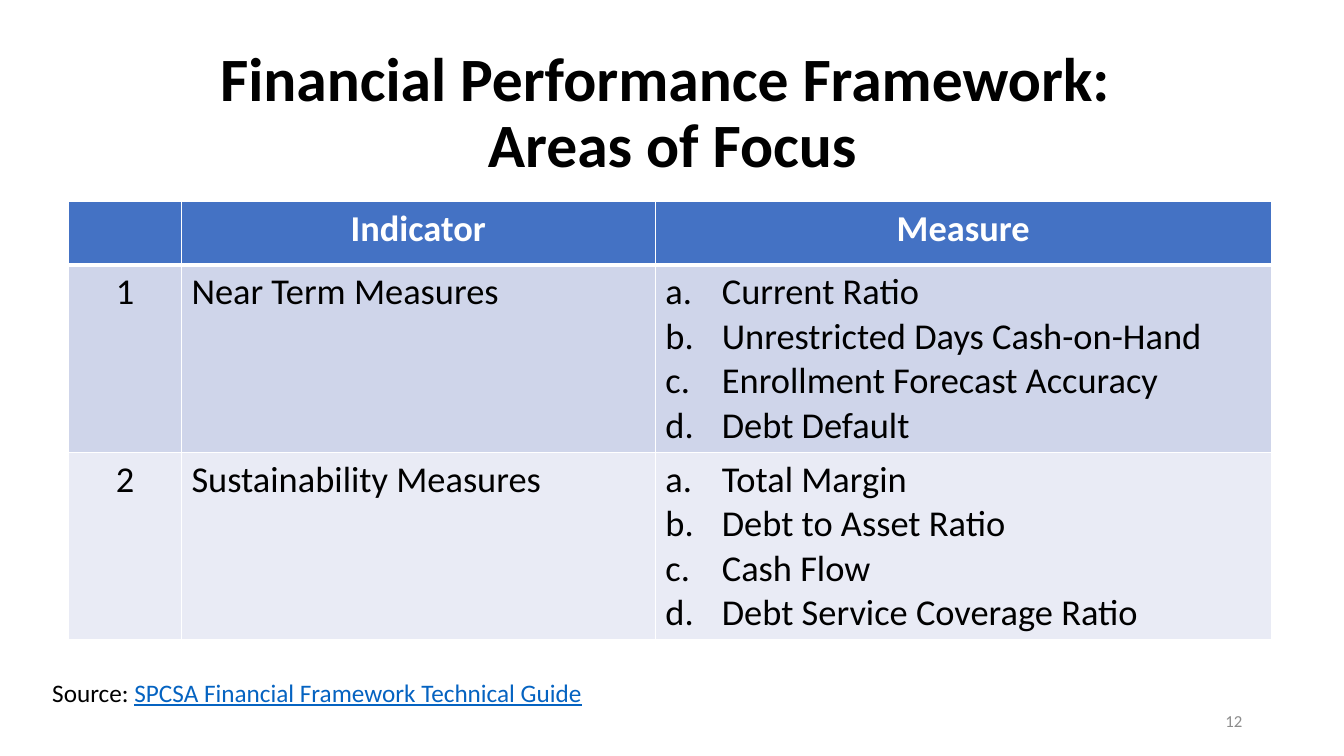
import pptx
import pptx.dml.color
import pptx.enum.text
import pptx.oxml
import pptx.oxml.ns
import pptx.util
from pptx.util import Inches

ALIGN = pptx.enum.text.PP_ALIGN
ANCHOR = pptx.enum.text.MSO_ANCHOR
COLORS = {
    "text": "000000", "white": "FFFFFF", "muted": "8C8C8C", "link": "0563C1",
    "header": "4472C4", "band_dark": "CFD5EA", "band_light": "E9EBF5",
}
COLUMN_WIDTHS = [1.12, 4.7, 6.11]
ROW_HEIGHTS = [0.63, 1.86, 1.86]
INDICATORS = [
    ("Near Term Measures",
     ["Current Ratio", "Unrestricted Days Cash-on-Hand",
      "Enrollment Forecast Accuracy", "Debt Default"]),
    ("Sustainability Measures",
     ["Total Margin", "Debt to Asset Ratio", "Cash Flow",
      "Debt Service Coverage Ratio"]),
]


def rgb(name):
    return pptx.dml.color.RGBColor.from_string(COLORS[name])


class SlideBuilder:
    def __init__(self, page, font="Calibri"):
        self.page = page
        self.font = font

    def style(self, span, size, color, bold=False):
        span.font.name = self.font
        span.font.size = pptx.util.Pt(size)
        span.font.color.rgb = rgb(color)
        span.font.bold = bold

    def text(self, place, words, size, color="text", bold=False,
             align=ALIGN.LEFT, anchor=ANCHOR.TOP):
        box = self.page.shapes.add_textbox(*map(Inches, place))
        frame = box.text_frame
        frame.word_wrap = True
        frame.vertical_anchor = anchor
        para = frame.paragraphs[0]
        para.text = words
        para.alignment = align
        for span in para.runs:
            self.style(span, size, color, bold)
        return para

    def table(self, left, top, widths, heights):
        frame = self.page.shapes.add_table(
            len(heights), len(widths), Inches(left), Inches(top),
            Inches(sum(widths)), Inches(sum(heights)))
        grid = frame.table
        for column, width in zip(grid.columns, widths):
            column.width = Inches(width)
        for row, height in zip(grid.rows, heights):
            row.height = Inches(height)
        return grid

    def cell(self, cell, lines, fill, color="text", bold=False,
             align=ALIGN.LEFT, top_line=1, bottom_line=1, lettered=False):
        self.borders(cell, {"L": 1, "R": 1, "T": top_line, "B": bottom_line})
        cell.fill.solid()
        cell.fill.fore_color.rgb = rgb(fill)
        cell.text_frame.text = "\n".join(lines)
        for para in cell.text_frame.paragraphs:
            para.alignment = align
            for span in para.runs:
                self.style(span, 26, color, bold)
            if lettered:
                self.letter(para)

    def borders(self, cell, widths):
        properties = cell._tc.get_or_add_tcPr()
        for side, points in widths.items():
            properties.append(pptx.oxml.parse_xml(
                f'<a:ln{side} {pptx.oxml.ns.nsdecls("a")} w="{pptx.util.Pt(points)}">'
                f'<a:solidFill><a:srgbClr val="{COLORS["white"]}"/></a:solidFill>'
                f'</a:ln{side}>'))

    def letter(self, para):
        """Number the paragraph a., b., c. with a hanging indent."""
        properties = para._p.get_or_add_pPr()
        properties.set("marL", str(Inches(0.56)))
        properties.set("indent", str(Inches(-0.56)))
        properties.append(pptx.oxml.parse_xml(
            f'<a:buFont {pptx.oxml.ns.nsdecls("a")} typeface="{self.font}"/>'))
        properties.append(pptx.oxml.parse_xml(
            f'<a:buAutoNum {pptx.oxml.ns.nsdecls("a")} type="alphaLcPeriod"/>'))


def main():
    deck = pptx.Presentation()
    deck.slide_width, deck.slide_height = Inches(13.33), Inches(7.5)
    page = deck.slides.add_slide(deck.slide_layouts[6])
    builder = SlideBuilder(page)

    title = builder.text(
        (0.92, 0.41, 11.5, 1.45),
        "Financial Performance Framework: \vAreas of Focus", 44, bold=True,
        align=ALIGN.CENTER, anchor=ANCHOR.MIDDLE)
    title.line_spacing = 0.9

    grid = builder.table(0.68, 2, COLUMN_WIDTHS, ROW_HEIGHTS)
    for column, heading in enumerate(["", "Indicator", "Measure"]):
        builder.cell(grid.cell(0, column), [heading], "header", "white",
                     bold=True, align=ALIGN.CENTER, bottom_line=3)
    for row, (indicator, measures) in enumerate(INDICATORS, 1):
        fill = "band_dark" if row % 2 else "band_light"
        top_line = 3 if row == 1 else 1
        builder.cell(grid.cell(row, 0), [str(row)], fill,
                     align=ALIGN.CENTER, top_line=top_line)
        builder.cell(grid.cell(row, 1), [indicator], fill, top_line=top_line)
        builder.cell(grid.cell(row, 2), measures, fill, top_line=top_line,
                     lettered=True)

    builder.text((9.42, 6.95, 3, 0.4), "12", 12, "muted",
                 align=ALIGN.RIGHT, anchor=ANCHOR.MIDDLE)

    source = builder.text((0.42, 6.67, 9, 0.4), "Source: ", 18)
    guide = source.add_run()
    guide.text = "SPCSA Financial Framework Technical Guide"
    builder.style(guide, 18, "link")
    guide.font.underline = True

    deck.save("out.pptx")


if __name__ == "__main__":
    main()
